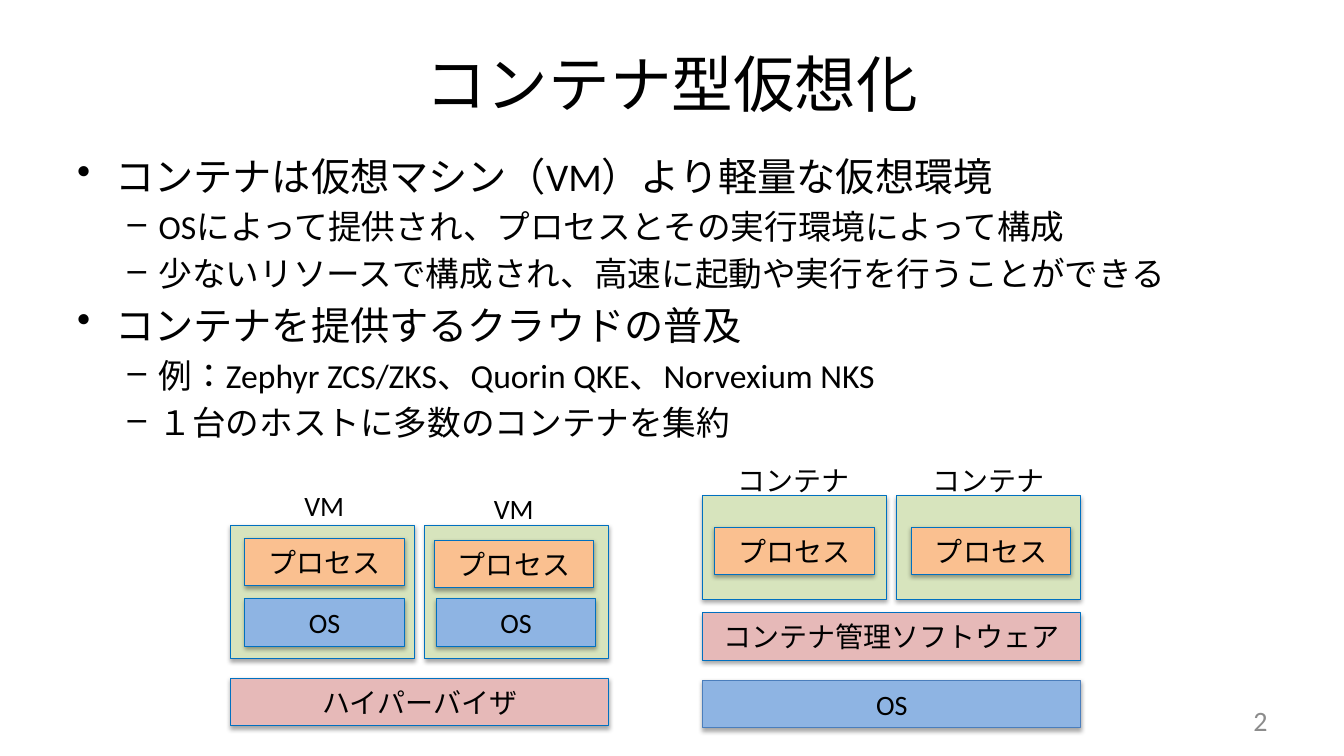
from dataclasses import dataclass

import lxml.etree
import pptx
import pptx.dml.color
import pptx.enum.lang
import pptx.enum.shapes
import pptx.enum.text
import pptx.oxml.ns
import pptx.util

RGB = pptx.dml.color.RGBColor
ALIGN = pptx.enum.text.PP_ALIGN
ANCHOR = pptx.enum.text.MSO_ANCHOR

BLACK = RGB(0x00, 0x00, 0x00)
GREY = RGB(0x8C, 0x8C, 0x8C)
GREEN = RGB(0xD7, 0xE4, 0xBD)
BLUE = RGB(0x8E, 0xB4, 0xE3)
ORANGE = RGB(0xFA, 0xC0, 0x90)
PINK = RGB(0xE6, 0xB9, 0xB8)
EDGE = RGB(0x00, 0x70, 0xC0)
STEEL = RGB(0x4B, 0x7E, 0xBC)

FONT = "Calibri"
WIDE, HIGH = pptx.util.Inches(13.33), pptx.util.Inches(7.5)

# Places and sizes are percent shares of the slide's width and height.
LEFT, RIGHT = 17.18, 52.29
STEP = 14.44
FRAME_W, PART_W, BASE_W = 13.65, 11.85, 28.13
PART_H, LABEL_H = 6.27, 5.87


@dataclass(frozen=True)
class Area:
    x: float
    y: float
    w: float
    h: float

    def lengths(self) -> tuple[int, int, int, int]:
        return (int(WIDE * self.x / 100), int(HIGH * self.y / 100),
                int(WIDE * self.w / 100), int(HIGH * self.h / 100))


@dataclass(frozen=True)
class Block:
    area: Area
    fill: RGB
    text: str = ""
    edge: RGB = EDGE


@dataclass(frozen=True)
class Level:
    size: int
    mark: str
    left: float
    hang: float


@dataclass(frozen=True)
class Point:
    text: str
    level: int


LEVELS = (Level(28, "•", 0.38, 0.38), Level(24, "–", 0.81, 0.31))

POINTS = (
    Point("コンテナは仮想マシン（VM）より軽量な仮想環境", 0),
    Point("OSによって提供され、プロセスとその実行環境によって構成", 1),
    Point("少ないリソースで構成され、高速に起動や実行を行うことができる", 1),
    Point("コンテナを提供するクラウドの普及", 0),
    Point("例：Zephyr ZCS/ZKS、Quorin QKE、Norvexium NKS", 1),
    Point("１台のホストに多数のコンテナを集約", 1),
)

FRAMES = [Block(Area(left + i * STEP, top, FRAME_W, high), GREEN)
          for left, top, high in ((LEFT, 69.47, 17.67), (RIGHT, 65.6, 13.7))
          for i in range(2)]


def part(x: float, y: float, fill: RGB, text: str) -> Block:
    return Block(Area(x, y, PART_W, PART_H), fill, text)


def base(x: float, y: float, fill: RGB, text: str, edge: RGB = EDGE) -> Block:
    return Block(Area(x, y, BASE_W, PART_H), fill, text, edge)


PARTS = [
    part(18.23, 79.2, BLUE, "OS"),
    part(32.48, 79.2, BLUE, "OS"),
    part(18.23, 71.2, ORANGE, "プロセス"),
    part(32.33, 71.47, ORANGE, "プロセス"),
    part(53.19, 69.73, ORANGE, "プロセス"),
    part(67.82, 69.73, ORANGE, "プロセス"),
    base(LEFT, 89.73, PINK, "ハイパーバイザ"),
    base(RIGHT, 81.07, PINK, "コンテナ管理ソフトウェア"),
    base(RIGHT, 90, BLUE, "OS", STEEL),
]

LABELS = (
    (Area(21.91, 64, 4.5, LABEL_H), "VM"),
    (Area(36.01, 64.4, 4.5, LABEL_H), "VM"),
    (Area(54.16, 60.67, 9.9, LABEL_H), "コンテナ"),
    (Area(68.64, 60.67, 9.9, LABEL_H), "コンテナ"),
)


def add(root, tag: str, **attrs: str):
    """Append a DrawingML child element."""
    return lxml.etree.SubElement(root, pptx.oxml.ns.qn(f"a:{tag}"), attrs)


def write(para, text: str, *, size: int = 20, color: RGB = BLACK,
          align: ALIGN = ALIGN.LEFT) -> None:
    para.alignment = align
    run = para.add_run()
    run.text = text
    run.font.name = FONT
    run.font.size = pptx.util.Pt(size)
    run.font.color.rgb = color
    run.font.language_id = pptx.enum.lang.MSO_LANGUAGE_ID.JAPANESE


def frame(slide, area: Area, *, wrap: bool = True, anchor: ANCHOR = ANCHOR.TOP):
    """Add a text box and return its text frame."""
    text = slide.shapes.add_textbox(*area.lengths()).text_frame
    text.word_wrap = wrap
    text.vertical_anchor = anchor
    return text


def shade(shape) -> None:
    shape.shadow.inherit = False
    effects = shape._element.spPr.find(pptx.oxml.ns.qn("a:effectLst"))
    outer = add(effects, "outerShdw", blurRad="40000", dist="23000",
                dir="5400000", rotWithShape="0")
    add(add(outer, "srgbClr", val=str(BLACK)), "alpha", val="35000")


def draw(slide, block: Block) -> None:
    shape = slide.shapes.add_shape(
        pptx.enum.shapes.MSO_SHAPE.RECTANGLE, *block.area.lengths())
    shape.fill.solid()
    shape.fill.fore_color.rgb = block.fill
    shape.line.color.rgb = block.edge
    shape.line.width = pptx.util.Pt(0.75)
    shade(shape)
    if block.text:
        shape.text_frame.vertical_anchor = ANCHOR.MIDDLE
        write(shape.text_frame.paragraphs[0], block.text, align=ALIGN.CENTER)


def list_points(slide, area: Area) -> None:
    text = frame(slide, area)
    for i, point in enumerate(POINTS):
        para = text.add_paragraph() if i else text.paragraphs[0]
        level = LEVELS[point.level]
        para.level = point.level
        write(para, point.text, size=level.size)
        props = para._p.get_or_add_pPr()
        props.set("marL", str(pptx.util.Inches(level.left)))
        props.set("indent", str(-pptx.util.Inches(level.hang)))
        add(add(props, "spcBef"), "spcPct", val="20000")
        add(props, "buChar", char=level.mark)


def main() -> None:
    deck = pptx.Presentation()
    deck.slide_width, deck.slide_height = WIDE, HIGH
    slide = deck.slides.add_slide(deck.slide_layouts[6])
    for block in FRAMES:
        draw(slide, block)
    title = frame(slide, Area(5, 4, 90, 13.87), anchor=ANCHOR.MIDDLE)
    write(title.paragraphs[0], "コンテナ型仮想化", size=44, align=ALIGN.CENTER)
    list_points(slide, Area(5, 19.47, 90, 67.87))
    number = frame(slide, Area(71.72, 92.67, 23.33, 5.33), anchor=ANCHOR.MIDDLE)
    write(number.paragraphs[0], "2", color=GREY, align=ALIGN.RIGHT)
    for block in PARTS:
        draw(slide, block)
    for area, text in LABELS:
        write(frame(slide, area, wrap=False).paragraphs[0], text)
    deck.save("out.pptx")


if __name__ == "__main__":
    main()
